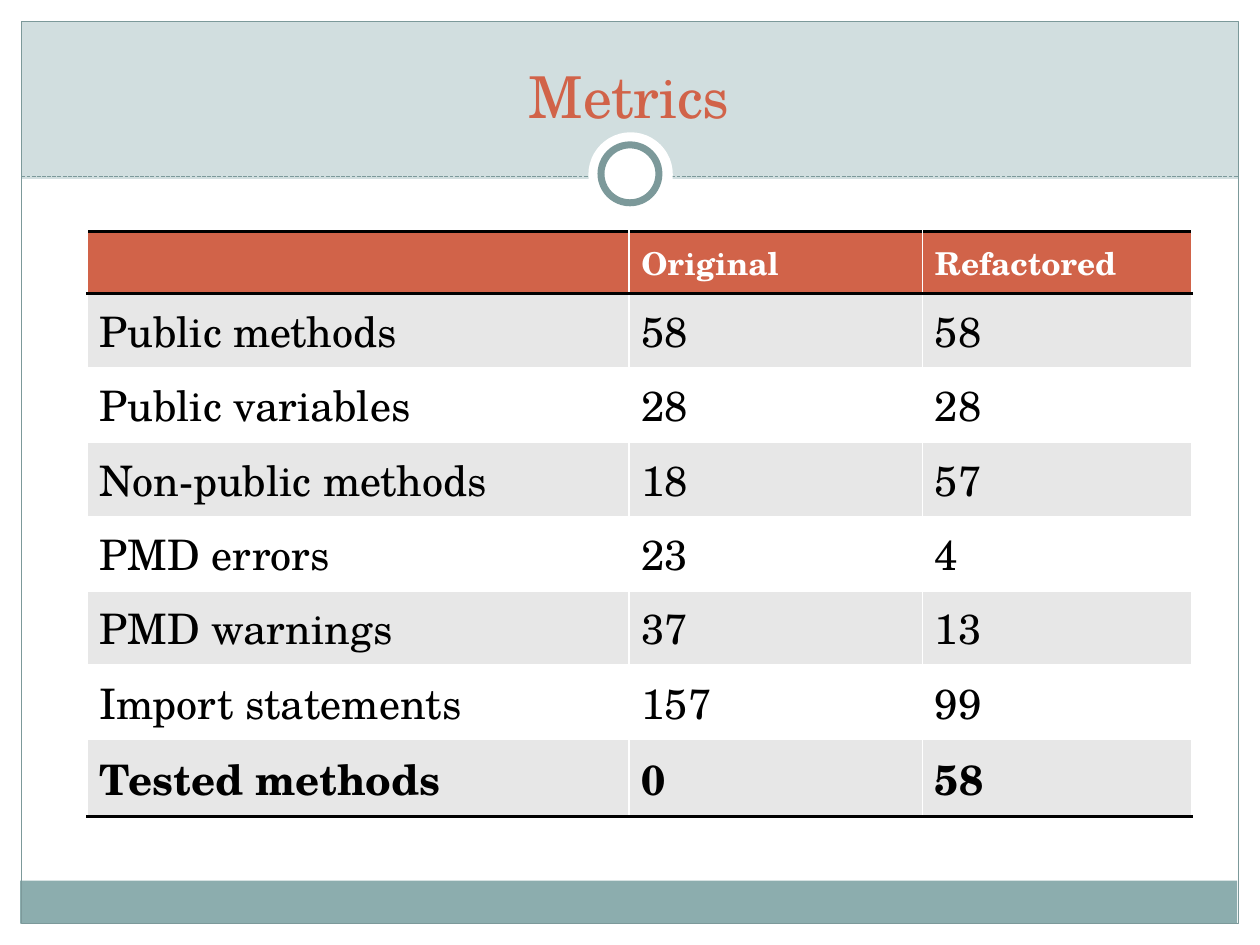
from lxml.etree import SubElement
from pptx import Presentation
from pptx.dml.color import RGBColor
from pptx.enum.dml import MSO_LINE
from pptx.enum.shapes import MSO_CONNECTOR, MSO_SHAPE
from pptx.enum.text import MSO_ANCHOR, MSO_AUTO_SIZE, PP_ALIGN
from pptx.oxml import parse_xml
from pptx.oxml.ns import nsdecls, qn
from pptx.util import Inches, Pt

FONT = "TeX Gyre Schola"
HEX = {"pale": "D1DEDF", "teal": "8CADAE", "edge": "7C999A", "rust": "D16349",
       "gray": "E7E7E7", "white": "FFFFFF", "black": "000000"}
RGB = {name: RGBColor.from_string(code) for name, code in HEX.items()}

prs = Presentation()
prs.slide_width, prs.slide_height = Inches(10), Inches(7.5)
slide = prs.slides.add_slide(prs.slide_layouts[5])
shapes = slide.shapes


def add_block(kind, box, fill=None, line=None, width=0.75):
    block = shapes.add_shape(kind, *map(Inches, box))
    block.shadow.inherit = False
    if fill:
        block.fill.solid()
        block.fill.fore_color.rgb = RGB[fill]
    else:
        block.fill.background()
    if line:
        block.line.color.rgb = RGB[line]
        block.line.width = Pt(width)
    else:
        block.line.fill.background()


def add_rule(cell, side):
    """Draw a 2 pt black border on the side 'T' or 'B' of a cell."""
    props = cell._tc.get_or_add_tcPr()
    rule = parse_xml(
        f'<a:ln{side} {nsdecls("a")} w="{Pt(2)}"><a:solidFill>'
        f'<a:srgbClr val="{HEX["black"]}"/></a:solidFill></a:ln{side}>')
    props.insert(len(props.findall(qn("a:lnT"))), rule)


# Frame and band
rect, oval = MSO_SHAPE.RECTANGLE, MSO_SHAPE.OVAL
add_block(rect, (0, 0.17, 10, 1.25), "pale")
for left in (0, 9.83):
    add_block(rect, (left, 0, 0.17, 7.5), "white")
add_block(rect, (0.16, 6.99, 9.66, 0.34), "teal")
add_block(rect, (0.17, 0.17, 9.66, 7.16), line="edge")

dash = shapes.add_connector(MSO_CONNECTOR.STRAIGHT, Inches(0.17), Inches(1.4),
                            Inches(9.83), Inches(1.4))
dash.line.color.rgb = RGB["edge"]
dash.line.width = Pt(0.75)
dash.line.dash_style = MSO_LINE.SQUARE_DOT
SubElement(dash._element.spPr, qn("a:effectLst"))

add_block(oval, (4.67, 1.05, 0.67, 0.67), "white")
add_block(oval, (4.77, 1.15, 0.46, 0.46), "white", "edge", 4)

# Title, brought in front of the band
title = shapes.title
shapes._spTree.append(title._element)
title.left, title.top = Inches(0.33), Inches(0.25)
title.width, title.height = Inches(9.33), Inches(0.83)
frame = title.text_frame
frame.text = "Metrics"
frame.auto_size = MSO_AUTO_SIZE.NONE
frame.vertical_anchor = MSO_ANCHOR.BOTTOM
head = frame.paragraphs[0]
head.alignment = PP_ALIGN.CENTER
head.font.name, head.font.size = FONT, Pt(33)
head.font.color.rgb = RGB["rust"]

# Metrics table
rows = [
    ("", "Original", "Refactored"),
    ("Public methods", "58", "58"),
    ("Public variables", "28", "28"),
    ("Non-public methods", "18", "57"),
    ("PMD errors", "23", "4"),
    ("PMD warnings", "37", "13"),
    ("Import statements", "157", "99"),
    ("Tested methods", "0", "58"),
]
last = len(rows) - 1
table = shapes.add_table(len(rows), 3, Inches(0.69), Inches(1.84),
                         Inches(8.77), Inches(4.63)).table
for col, width in zip(table.columns, (4.3, 2.33, 2.14)):
    col.width = Inches(width)

for r, row in enumerate(rows):
    top = r == 0
    table.rows[r].height = Inches(0.49 if top else 0.61 if r == last else 0.59)
    fill = "rust" if top else "gray" if r % 2 else "white"
    for c, text in enumerate(row):
        cell = table.cell(r, c)
        cell.text = text
        cell.fill.solid()
        cell.fill.fore_color.rgb = RGB[fill]
        font = cell.text_frame.paragraphs[0].font
        font.name, font.size = FONT, Pt(18 if top else 24)
        font.bold = r in (0, last)
        font.color.rgb = RGB["white" if top else "black"]
        if top:
            add_rule(cell, "T")
        if r in (0, last):
            add_rule(cell, "B")

prs.save("out.pptx")
